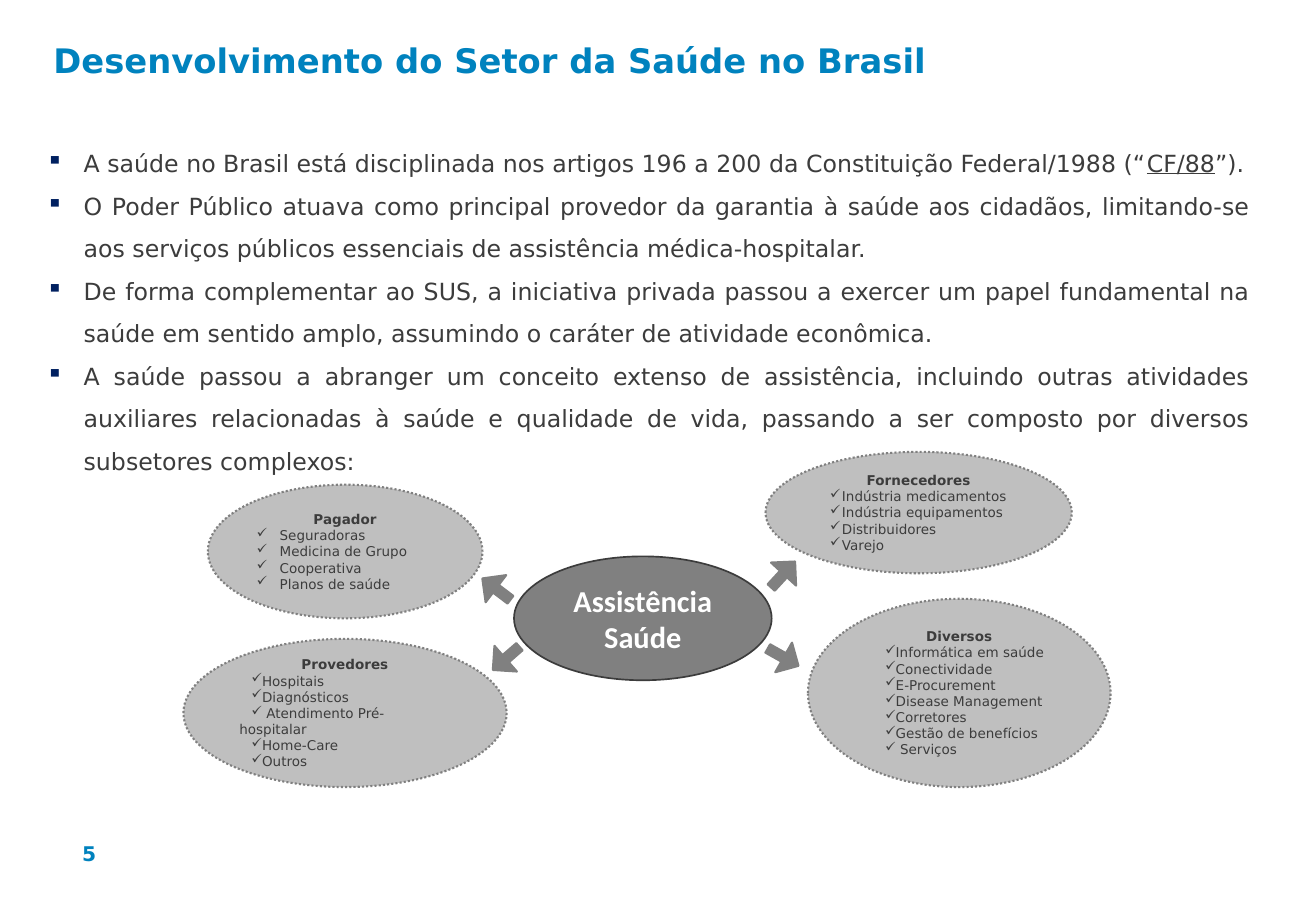
from lxml.etree import SubElement
from pptx import Presentation
from pptx.dml.color import RGBColor
from pptx.enum.dml import MSO_LINE
from pptx.enum.shapes import MSO_SHAPE
from pptx.enum.text import MSO_ANCHOR, PP_ALIGN
from pptx.oxml.ns import qn
from pptx.util import Inches, Pt

colour = RGBColor.from_string
BLUE, INK, GREY, SILVER, WHITE, NAVY = "0082BE", "3C3C3C", "808080", "BFBFBF", "FFFFFF", "002060"

deck = Presentation()
deck.slide_width, deck.slide_height = Inches(10.83), Inches(7.5)
slide = deck.slides.add_slide(deck.slide_layouts[6])


def area(left, top, width, height):
    across, down = deck.slide_width / 100, deck.slide_height / 100
    return int(left * across), int(top * down), int(width * across), int(height * down)


def write(frame, texts, size, ink, bold=False, align=PP_ALIGN.LEFT, font="DejaVu Sans",
          margin=0, indent=0, bullet=None, bullet_ink=INK):
    for text in texts:
        paragraph = frame.paragraphs[0]
        if paragraph.runs:
            paragraph = frame.add_paragraph()
        paragraph.alignment = align
        properties = paragraph._p.get_or_add_pPr()
        properties.set("marL", str(Inches(margin)))
        properties.set("indent", str(Inches(indent)))
        if bullet:
            tint = SubElement(properties, qn("a:buClr"))
            SubElement(tint, qn("a:srgbClr"), val=bullet_ink)
            SubElement(properties, qn("a:buChar"), char=bullet)
        for piece in filter(None, text.partition("CF/88")):
            run = paragraph.add_run()
            run.text = piece
            run.font.name, run.font.size, run.font.bold = font, Pt(size), bold
            run.font.color.rgb = colour(ink)
            if piece == "CF/88":
                run.font.underline = True


statements = [
    "A saúde no Brasil está disciplinada nos artigos 196 a 200 da Constituição Federal/1988 (“CF/88”).",
    "O Poder Público atuava como principal provedor da garantia à saúde aos cidadãos, "
    "limitando-se aos serviços públicos essenciais de assistência médica-hospitalar.",
    "De forma complementar ao SUS, a iniciativa privada passou a exercer um papel fundamental "
    "na saúde em sentido amplo, assumindo o caráter de atividade econômica.",
    "A saúde passou a abranger um conceito extenso de assistência, incluindo outras atividades "
    "auxiliares relacionadas à saúde e qualidade de vida, passando a ser composto por diversos "
    "subsetores complexos:",
]
body = slide.shapes.add_textbox(*area(2.59, 14.13, 93.35, 74.4)).text_frame
body.word_wrap = True
write(body, statements, 14, INK, align=PP_ALIGN.JUSTIFY, margin=0.31, indent=-0.31,
      bullet="▪", bullet_ink=NAVY)
for paragraph in body.paragraphs:
    paragraph.line_spacing = 1.5

title = slide.shapes.add_textbox(*area(3.14, 3.73, 88.37, 12.13)).text_frame
title.word_wrap = True
write(title, ["Desenvolvimento do Setor da Saúde no Brasil"], 20, BLUE, bold=True)

core = slide.shapes.add_shape(MSO_SHAPE.OVAL, *area(39.06, 61.07, 19.58, 13.6))
write(core.text_frame, ["Assistência", "Saúde"], 18, WHITE, bold=True, align=PP_ALIGN.CENTER,
      font="Calibri", margin=0.12, indent=-0.12)
figures = [(core, GREY, INK, 1)]

sectors = [
    ("Fornecedores", (58.17, 49.6, 23.27, 13.33), 0.19, -0.1,
     ["Indústria medicamentos", "Indústria equipamentos", "Distribuidores", "Varejo"]),
    ("Diversos", (61.4, 65.73, 22.99, 20.67), 0.19, 0.01,
     ["Informática em saúde", "Conectividade", "E-Procurement", "Disease Management",
      "Corretores", "Gestão de benefícios", " Serviços"]),
    ("Pagador", (15.79, 53.2, 20.87, 14.67), 0.19, -0.19,
     ["Seguradoras", "Medicina de Grupo", "Cooperativa", "Planos de saúde"]),
    ("Provedores", (13.94, 70.13, 24.56, 16.27), 0, 0.1,
     ["Hospitais", "Diagnósticos", " Atendimento Pré-hospitalar", "Home-Care", "Outros"]),
]
for heading, place, margin, indent, members in sectors:
    sector = slide.shapes.add_shape(MSO_SHAPE.OVAL, *area(*place))
    sector.line.dash_style = MSO_LINE.ROUND_DOT
    write(sector.text_frame, [heading], 8, INK, bold=True, align=PP_ALIGN.CENTER)
    write(sector.text_frame, members, 8, INK, margin=margin, indent=indent, bullet="✓")
    figures.append((sector, SILVER, GREY, 1.25))

for left, top, angle in [(58.17, 61.2, 312.6), (58.17, 70.27, 29.5),
                         (36.38, 62.8, 217.1), (37.12, 70.4, 138.9)]:
    arrow = slide.shapes.add_shape(MSO_SHAPE.RIGHT_ARROW, *area(left, top, 2.68, 3.73))
    arrow.rotation = angle
    arrow.adjustments[0] = 0.28
    figures.append((arrow, GREY, GREY, 1.25))

for figure, fill, edge, weight in figures:
    figure.shadow.inherit = False
    figure.fill.solid()
    figure.fill.fore_color.rgb = colour(fill)
    figure.line.color.rgb = colour(edge)
    figure.line.width = Pt(weight)
    frame = figure.text_frame
    frame.word_wrap = True
    frame.vertical_anchor = MSO_ANCHOR.MIDDLE
    frame.margin_left = frame.margin_right = frame.margin_top = frame.margin_bottom = Inches(0.07)

page_number = slide.shapes.add_textbox(*area(1.48, 91.73, 6.74, 5.33)).text_frame
page_number.word_wrap = True
write(page_number, ["5"], 12, BLUE, bold=True, align=PP_ALIGN.RIGHT)

deck.save("out.pptx")
